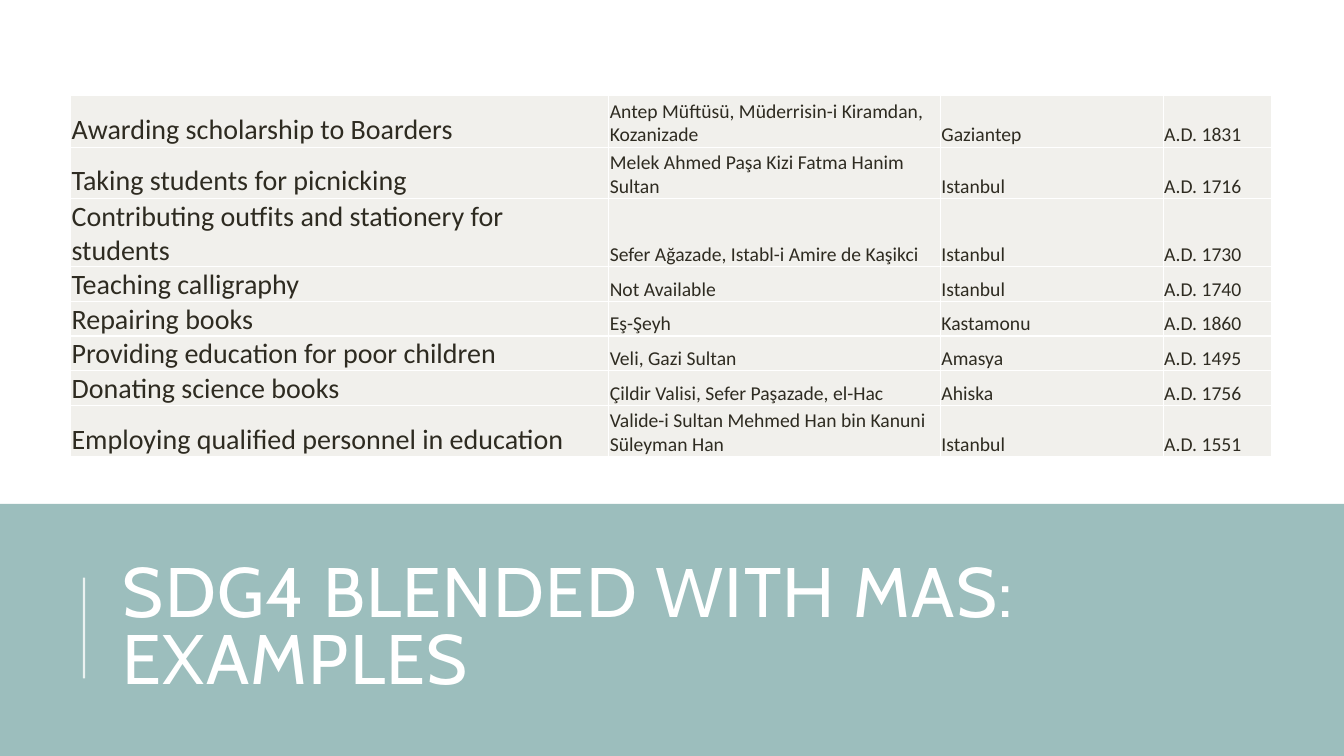
import pptx
import pptx.util
import pptx.dml.color
import pptx.enum.shapes
import pptx.enum.text
import pptx.oxml
import pptx.oxml.ns

COLORS = {"band": "9CBEBD", "white": "FFFFFF", "cell": "F1F0EC", "text": "2E2B21"}
WIDTH = pptx.util.Inches(13.33)
HEIGHT = pptx.util.Inches(7.5)
GRID_COLUMNS, GRID_ROWS = 160, 90
TABLE_COLUMNS = [64.08, 39.48, 26.52, 12.96]
TALL_ROW, SHORT_ROW = 6.12, 3.36
TABLE_ROWS = [TALL_ROW] * 3 + [SHORT_ROW] * 4 + [TALL_ROW]
EXAMPLES = [
    ("Awarding scholarship to Boarders", "Antep Müftüsü, Müderrisin-i Kiramdan, Kozanizade", "Gaziantep", "A.D. 1831"),
    ("Taking students for picnicking", "Melek Ahmed Paşa Kizi Fatma Hanim Sultan", "Istanbul", "A.D. 1716"),
    ("Contributing outfits and stationery for students", "Sefer Ağazade, Istabl-i Amire de Kaşikci", "Istanbul", "A.D. 1730"),
    ("Teaching calligraphy", "Not Available", "Istanbul", "A.D. 1740"),
    ("Repairing books", "Eş-Şeyh", "Kastamonu", "A.D. 1860"),
    ("Providing education for poor children", "Veli, Gazi Sultan", "Amasya", "A.D. 1495"),
    ("Donating science books", "Çildir Valisi, Sefer Paşazade, el-Hac", "Ahiska", "A.D. 1756"),
    ("Employing qualified personnel in education", "Valide-i Sultan Mehmed Han bin Kanuni Süleyman Han", "Istanbul", "A.D. 1551"),
]


def across(columns):
    return round(WIDTH * columns / GRID_COLUMNS)


def down(rows):
    return round(HEIGHT * rows / GRID_ROWS)


def color(name):
    return pptx.dml.color.RGBColor.from_string(COLORS[name])


def format_run(run, font_name, size, color_name):
    run.font.name = font_name
    run.font.size = pptx.util.Pt(size)
    run.font.color.rgb = color(color_name)


def add_borders(cell):
    properties = cell._tc.get_or_add_tcPr()
    for side in ("lnL", "lnR", "lnT", "lnB"):
        properties.append(pptx.oxml.parse_xml(
            f'<a:{side} {pptx.oxml.ns.nsdecls("a")} w="12700"><a:solidFill>'
            f'<a:srgbClr val="{COLORS["white"]}"/></a:solidFill></a:{side}>'))


def fill_cell(cell, text, size):
    add_borders(cell)
    cell.fill.solid()
    cell.fill.fore_color.rgb = color("cell")
    cell.vertical_anchor = pptx.enum.text.MSO_ANCHOR.BOTTOM
    cell.margin_left = cell.margin_right = cell.margin_top = pptx.util.Inches(0.01)
    cell.margin_bottom = 0
    cell.text_frame.text = text
    format_run(cell.text_frame.paragraphs[0].runs[0], "Calibri", size, "text")


def add_examples_table(slide, left, top):
    table = slide.shapes.add_table(
        len(EXAMPLES), len(TABLE_COLUMNS), across(left), down(top),
        across(sum(TABLE_COLUMNS)), down(sum(TABLE_ROWS))).table
    table.first_row = table.horz_banding = False
    for column, width in zip(table.columns, TABLE_COLUMNS):
        column.width = across(width)
    for row, height, example in zip(table.rows, TABLE_ROWS, EXAMPLES):
        row.height = down(height)
        for index, (cell, text) in enumerate(zip(row.cells, example)):
            fill_cell(cell, text, 20 if index == 0 else 14)


def add_title(slide, left, top, width, height):
    title = slide.shapes.add_textbox(across(left), down(top), across(width), down(height))
    frame = title.text_frame
    frame.word_wrap = True
    frame.vertical_anchor = pptx.enum.text.MSO_ANCHOR.MIDDLE
    frame.text = "SDG4 BLENDED WITH MAS: EXAMPLES"
    paragraph = frame.paragraphs[0]
    paragraph.line_spacing = 0.8
    run = paragraph.runs[0]
    format_run(run, "Cabin", 50, "white")
    run.font._element.set("spc", "100")


def add_title_rule(slide, left, top, height):
    rule = slide.shapes.add_connector(
        pptx.enum.shapes.MSO_CONNECTOR.STRAIGHT,
        across(left), down(top + height), across(left), down(top))
    rule.line.width = pptx.util.Pt(1.5)
    rule.line.color.rgb = color("white")
    properties = rule._element.spPr
    shade = properties.find(".//" + pptx.oxml.ns.qn("a:srgbClr"))
    shade.append(pptx.oxml.parse_xml(f'<a:alpha {pptx.oxml.ns.nsdecls("a")} val="80000"/>'))
    properties.append(pptx.oxml.parse_xml(f'<a:effectLst {pptx.oxml.ns.nsdecls("a")}/>'))


def add_title_band(slide, left, top, width, height):
    band = slide.shapes.add_shape(
        pptx.enum.shapes.MSO_SHAPE.RECTANGLE,
        across(left), down(top), across(width), down(height))
    band.shadow.inherit = False
    band.fill.solid()
    band.fill.fore_color.rgb = color("band")
    band.line.fill.background()
    add_title(slide, left + 13.44, top + 5.28, width - 32.44, height - 10.32)
    add_title_rule(slide, left + 10, top + 8.76, 12)


def main():
    presentation = pptx.Presentation()
    presentation.slide_width = WIDTH
    presentation.slide_height = HEIGHT
    slide = presentation.slides.add_slide(presentation.slide_layouts[6])
    add_title_band(slide, 0, 60, GRID_COLUMNS, 30)
    add_examples_table(slide, 8.4, 11.4)
    presentation.save("out.pptx")


if __name__ == "__main__":
    main()
